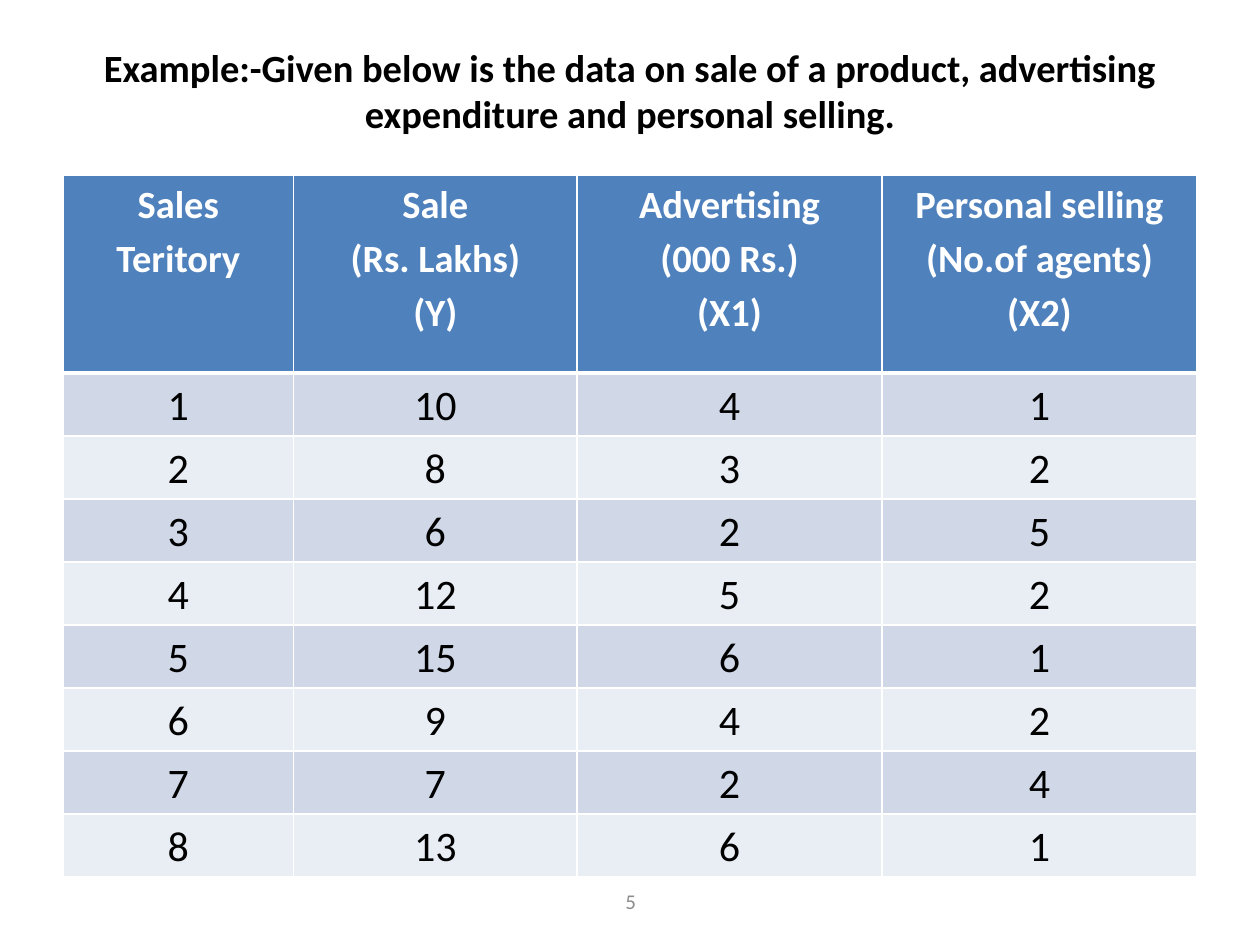
from dataclasses import dataclass
from typing import Any

from lxml.etree import SubElement
from pptx import Presentation
from pptx.dml.color import RGBColor
from pptx.enum.text import MSO_ANCHOR as Anchor, PP_ALIGN as Align
from pptx.oxml.ns import qn
from pptx.util import Inches, Pt

TITLE = ("Example:-Given below is the data on sale of a product, "
         "advertising expenditure and personal selling.")
HEADINGS = [
    ["Sales", "Teritory"],
    ["Sale", "(Rs. Lakhs)", "(Y)"],
    ["Advertising", "(000 Rs.)", "(X1)"],
    ["Personal selling", "(No.of agents)", "(X2)"],
]
SALES = [
    (1, 10, 4, 1),
    (2, 8, 3, 2),
    (3, 6, 2, 5),
    (4, 12, 5, 2),
    (5, 15, 6, 1),
    (6, 9, 4, 2),
    (7, 7, 2, 4),
    (8, 13, 6, 1),
]
COLUMN_WIDTHS = [1.83, 2.25, 2.42, 2.5]
HEADER_HEIGHT, ROW_HEIGHT = 1.57, 0.5


def color(value):
    return RGBColor.from_string(value)


def write(frame, lines, size, ink, font, bold=False, spacing=1.0):
    """Fill a text frame with centred paragraphs, one per line."""
    for index, line in enumerate(lines):
        para = frame.paragraphs[0] if index == 0 else frame.add_paragraph()
        para.alignment = Align.CENTER
        para.line_spacing = spacing
        span = para.add_run()
        span.text = line
        span.font.name = font
        span.font.size = Pt(size)
        span.font.bold = bold
        span.font.color.rgb = color(ink)


@dataclass
class SlideBuilder:
    page: Any
    font: str = "Calibri"
    text: str = "000000"
    muted: str = "8C8C8C"
    white: str = "FFFFFF"
    header: str = "4F81BD"
    bands: tuple = ("D0D8E8", "E9EDF4")

    def add_text(self, line, left, top, width, height, anchor, **style):
        box = self.page.shapes.add_textbox(
            Inches(left), Inches(top), Inches(width), Inches(height))
        frame = box.text_frame
        frame.word_wrap = True
        frame.vertical_anchor = anchor
        write(frame, [line], font=self.font, **style)

    def add_border(self, cell, side, width):
        line = SubElement(cell._tc.get_or_add_tcPr(), qn(f"a:ln{side}"),
                          w=str(Pt(width)))
        fill = SubElement(line, qn("a:solidFill"))
        SubElement(fill, qn("a:srgbClr"), val=self.white)

    def style_cell(self, cell, lines, fill, top=1, bottom=1, **style):
        cell.margin_left = cell.margin_right = Inches(0.07)
        cell.margin_top = cell.margin_bottom = 0
        # Borders come before the fill in the cell properties
        for side, width in zip("LRTB", (1, 1, top, bottom)):
            self.add_border(cell, side, width)
        cell.fill.solid()
        cell.fill.fore_color.rgb = color(fill)
        write(cell.text_frame, lines, font=self.font, spacing=1.15, **style)

    def add_table(self, headings, records, left, top):
        height = HEADER_HEIGHT + ROW_HEIGHT * len(records)
        table = self.page.shapes.add_table(
            len(records) + 1, len(headings), Inches(left), Inches(top),
            Inches(sum(COLUMN_WIDTHS)), Inches(height)).table
        for column, width in zip(table.columns, COLUMN_WIDTHS):
            column.width = Inches(width)
        for index, row in enumerate(table.rows):
            row.height = Inches(ROW_HEIGHT if index else HEADER_HEIGHT)

        # Header row
        for cell, lines in zip(table.rows[0].cells, headings):
            self.style_cell(cell, lines, self.header, bottom=3,
                            size=22, ink=self.white, bold=True)
        # Banded data rows
        for index, record in enumerate(records):
            for cell, value in zip(table.rows[index + 1].cells, record):
                self.style_cell(cell, [str(value)], self.bands[index % 2],
                                top=1 if index else 3, size=24, ink=self.text)


def main():
    deck = Presentation()
    deck.slide_width, deck.slide_height = Inches(10), Inches(7.5)
    builder = SlideBuilder(deck.slides.add_slide(deck.slide_layouts[6]))

    # Title
    builder.add_text(TITLE, 0.5, 0.3, 9, 1.25, Anchor.TOP,
                     size=22, ink=builder.text, bold=True)
    # Sales data
    builder.add_table(HEADINGS, SALES, 0.5, 1.39)
    # Page number
    builder.add_text("5", 3.42, 6.95, 3.17, 0.4, Anchor.MIDDLE,
                     size=12, ink=builder.muted)

    deck.save("out.pptx")


if __name__ == "__main__":
    main()
